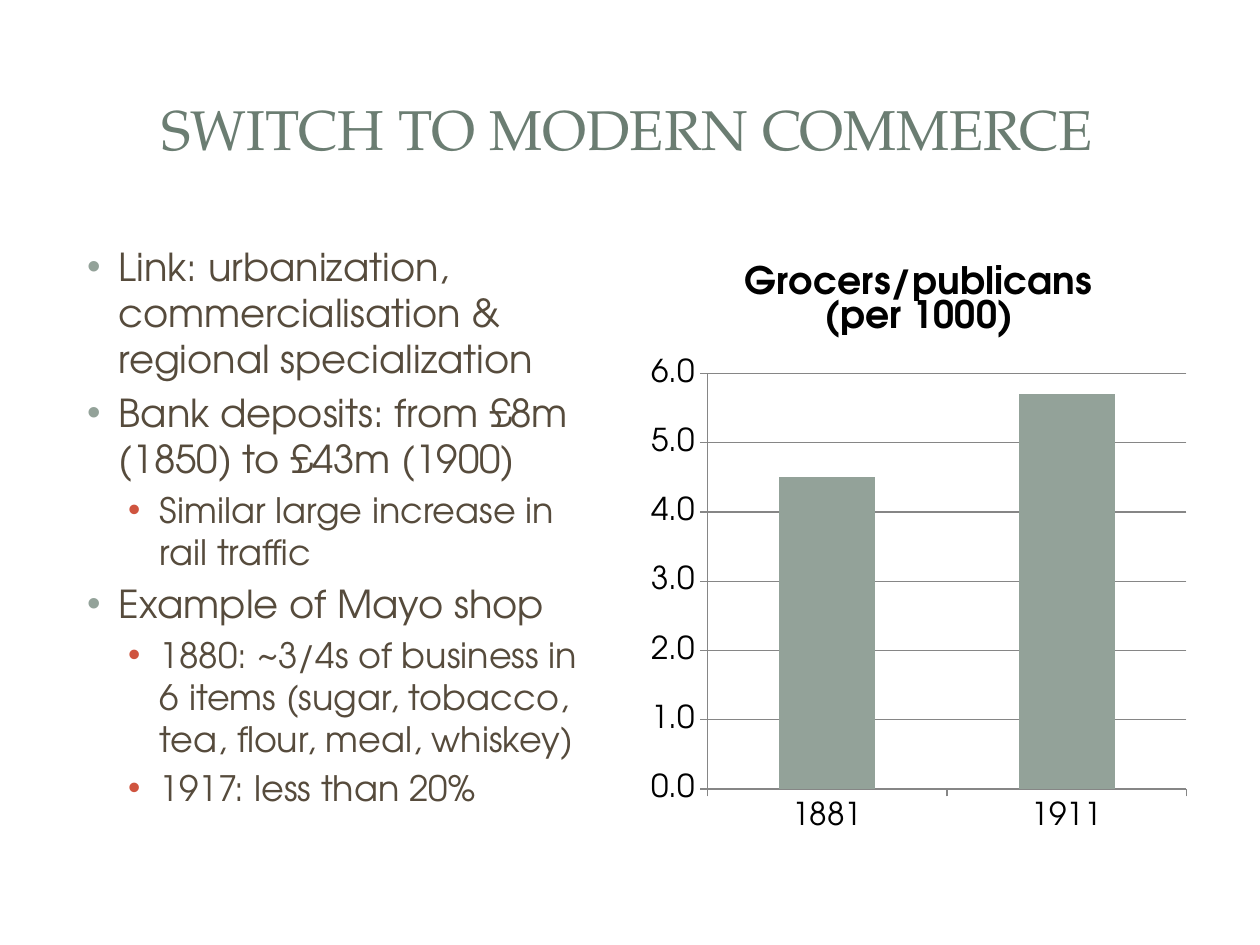
import pptx
import pptx.chart.data
import pptx.dml.color
import pptx.enum.chart
import pptx.enum.shapes
import pptx.enum.text
import pptx.oxml
import pptx.oxml.ns
import pptx.util
from pptx.util import Cm

COLOURS = {
    "panel": "FFFFFF",
    "title": "6B7D72",
    "body": "564B3C",
    "sage": "93A299",
    "red": "CF543F",
    "chart text": "000000",
    "grid": "868686",
}
HEADING_FONT = "TeX Gyre Pagella"
BODY_FONT = "TeX Gyre Adventor"
LEVELS = [
    {"size": 22, "margin": Cm(0.95), "bullet": "sage"},
    {"size": 20, "margin": Cm(1.78), "bullet": "red"},
]
HANGING = Cm(0.64)
POINTS = [
    (0, "Link: urbanization, commercialisation & regional specialization"),
    (0, "Bank deposits: from £8m (1850) to £43m (1900)"),
    (1, "Similar large increase in rail traffic"),
    (0, "Example of Mayo shop"),
    (1, "1880: ~3/4s of business in 6 items (sugar, tobacco, tea, flour, meal, whiskey)"),
    (1, "1917: less than 20%"),
]
CHART_TITLE = "Grocers/publicans (per 1000)"
GROCERS = {"1881": 4.5, "1911": 5.7}
COLUMN_TOP, COLUMN_WIDTH, COLUMN_HEIGHT = Cm(4.77), Cm(11.23), Cm(12.24)


def rgb(name):
    """Return the named colour."""
    return pptx.dml.color.RGBColor.from_string(COLOURS[name])


def set_font(font, family, size, colour, bold=False):
    """Set the family, size, colour and weight of a font."""
    font.name, font.size, font.bold = family, pptx.util.Pt(size), bold
    font.color.rgb = rgb(colour)


def add_panel(page, kind, left, top, width, height):
    """Add a plain borderless panel."""
    panel = page.shapes.add_shape(kind, left, top, width, height)
    panel.shadow.inherit = False
    panel.fill.solid()
    panel.fill.fore_color.rgb = rgb("panel")
    panel.line.fill.background()
    return panel


def add_panels(page):
    """Lay the page panel and the two title panels behind the text."""
    kinds = pptx.enum.shapes.MSO_SHAPE
    card = add_panel(page, kinds.ROUNDED_RECTANGLE, Cm(0.25), Cm(0.28), Cm(24.89), Cm(18.52))
    card.adjustments[0] = 0.02
    band = add_panel(page, kinds.RECTANGLE, Cm(0.76), Cm(0.76), Cm(23.88), Cm(3.68))
    colour = band.fill._xPr.find(".//" + pptx.oxml.ns.qn("a:srgbClr"))
    namespace = pptx.oxml.ns.nsdecls("a")
    colour.append(pptx.oxml.parse_xml(f'<a:alpha {namespace} val="83000"/>'))
    inset = add_panel(page, kinds.RECTANGLE, Cm(1.04), Cm(1.04), Cm(23.29), Cm(3.1))
    for panel in (card, band, inset):
        page.shapes.title._element.addprevious(panel._element)


def place(box, left, top, width, height):
    """Move and size a placeholder and keep its text at its set size."""
    box.left, box.top, box.width, box.height = left, top, width, height
    box.text_frame.word_wrap = True
    box.text_frame.auto_size = pptx.enum.text.MSO_AUTO_SIZE.NONE


def add_bullet(paragraph, margin, colour):
    """Give a paragraph a hanging coloured bullet."""
    properties = paragraph._p.get_or_add_pPr()
    properties.set("marL", str(margin))
    properties.set("indent", str(-HANGING))
    namespace = pptx.oxml.ns.nsdecls("a")
    for markup in (
        f'<a:buClr {namespace}><a:srgbClr val="{COLOURS[colour]}"/></a:buClr>',
        f'<a:buFont {namespace} typeface="Arial"/>',
        f'<a:buChar {namespace} char="•"/>',
    ):
        properties.append(pptx.oxml.parse_xml(markup))


def fill_title(box):
    """Write the centred slide title."""
    place(box, Cm(1.19), Cm(1.14), Cm(22.93), Cm(2.9))
    box.text_frame.vertical_anchor = pptx.enum.text.MSO_ANCHOR.MIDDLE
    paragraph = box.text_frame.paragraphs[0]
    paragraph.text = "SWITCH TO MODERN COMMERCE"
    paragraph.alignment = pptx.enum.text.PP_ALIGN.CENTER
    set_font(paragraph.font, HEADING_FONT, 32, "title")


def fill_points(box):
    """Write the two-level list."""
    place(box, Cm(1.19), COLUMN_TOP, COLUMN_WIDTH, COLUMN_HEIGHT)
    frame = box.text_frame
    for index, (level, text) in enumerate(POINTS):
        paragraph = frame.add_paragraph() if index else frame.paragraphs[0]
        style = LEVELS[level]
        paragraph.text, paragraph.level = text, level
        add_bullet(paragraph, style["margin"], style["bullet"])
        paragraph.space_before = pptx.util.Pt(style["size"] * 0.2)
        set_font(paragraph.font, BODY_FONT, style["size"], "body")


def style_line(line):
    """Draw a chart line thin and grey."""
    line.color.rgb = rgb("grid")
    line.width = pptx.util.Pt(0.75)


def style_axis(axis):
    """Give an axis a grey line and outside ticks."""
    axis.major_tick_mark = pptx.enum.chart.XL_TICK_MARK.OUTSIDE
    axis.minor_tick_mark = pptx.enum.chart.XL_TICK_MARK.NONE
    style_line(axis.format.line)


def add_column_chart(page):
    """Add the chart of grocers and publicans."""
    data = pptx.chart.data.CategoryChartData(number_format="#,##0.0")
    data.categories = list(GROCERS)
    data.add_series(CHART_TITLE, list(GROCERS.values()))
    chart = page.shapes.add_chart(
        pptx.enum.chart.XL_CHART_TYPE.COLUMN_CLUSTERED,
        Cm(12.91), COLUMN_TOP, COLUMN_WIDTH, COLUMN_HEIGHT, data,
    ).chart
    set_font(chart.font, BODY_FONT, 18, "chart text")
    chart.has_legend = False
    chart.has_title = True
    paragraph = chart.chart_title.text_frame.paragraphs[0]
    paragraph.text = CHART_TITLE
    set_font(paragraph.font, BODY_FONT, 21.6, "chart text", bold=True)

    plot = chart.plots[0]
    plot.gap_width, plot.vary_by_categories = 150, False
    bars = plot.series[0].format.fill
    bars.solid()
    bars.fore_color.rgb = rgb("sage")

    values = chart.value_axis
    values.minimum_scale, values.maximum_scale, values.major_unit = 0, 6, 1
    values.tick_labels.number_format = "#,##0.0"
    values.tick_labels.number_format_is_linked = False
    style_line(values.major_gridlines.format.line)
    for axis in (chart.category_axis, values):
        style_axis(axis)


def main():
    """Build and save the slide."""
    deck = pptx.Presentation()
    deck.slide_width, deck.slide_height = Cm(25.4), Cm(19.05)
    page = deck.slides.add_slide(deck.slide_layouts[1])
    add_panels(page)
    fill_title(page.shapes.title)
    fill_points(page.placeholders[1])
    add_column_chart(page)
    deck.save("out.pptx")


if __name__ == "__main__":
    main()
